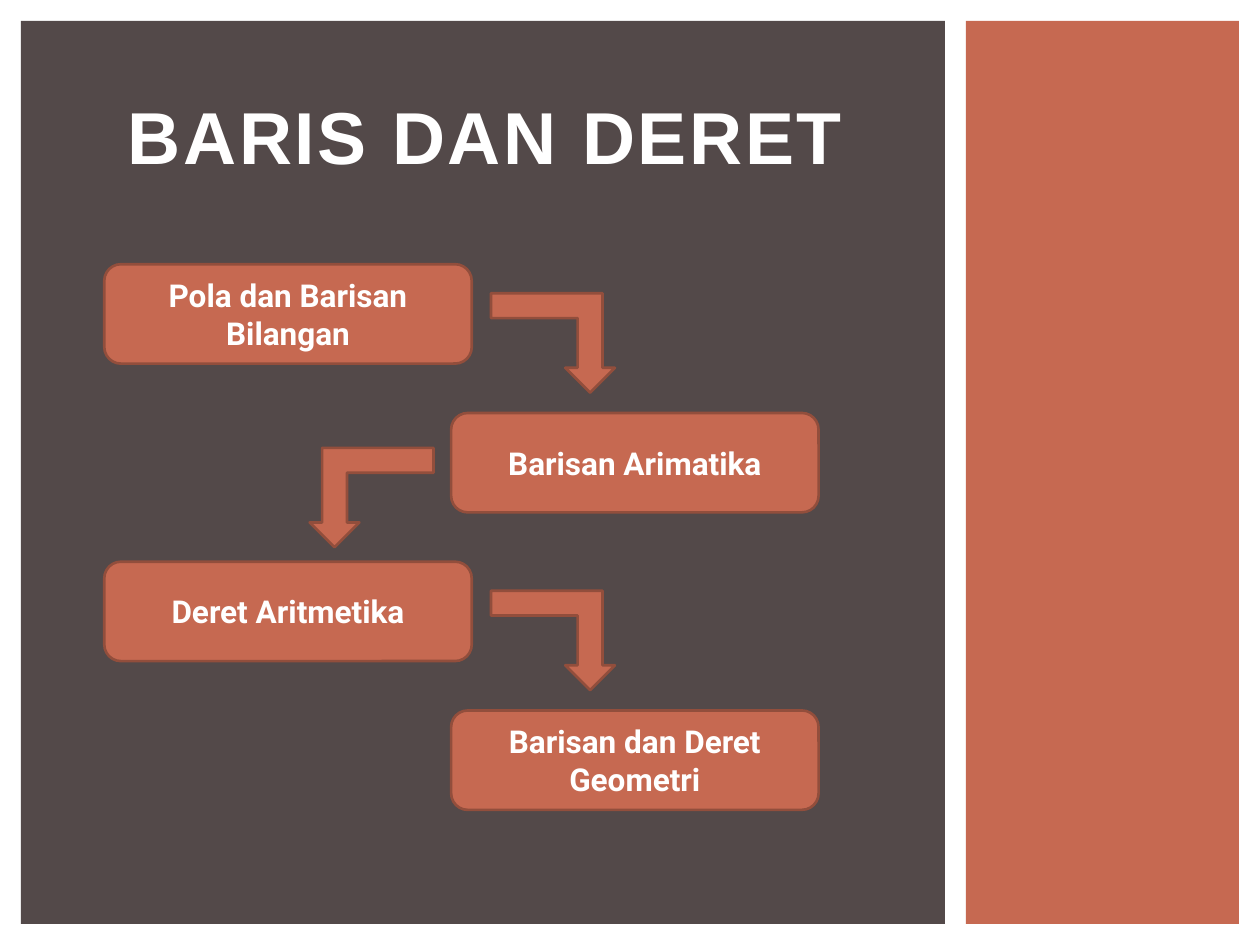
from dataclasses import dataclass

from pptx import Presentation
from pptx.dml.color import RGBColor
from pptx.enum import shapes, text
from pptx.util import Pt


@dataclass(frozen=True)
class Theme:
    dark: RGBColor = RGBColor(0x53, 0x49, 0x49)
    accent: RGBColor = RGBColor(0xC6, 0x69, 0x51)
    outline: RGBColor = RGBColor(0x92, 0x4E, 0x3C)
    white: RGBColor = RGBColor(0xFF, 0xFF, 0xFF)
    title_font: str = "Arial"
    step_font: str = "Roboto"
    title_size: float = 42
    step_size: float = 18
    line_width: float = 1.5


THEME = Theme()
SHAPE = shapes.MSO_SHAPE
STEPS = [
    "Pola dan Barisan Bilangan",
    "Barisan Arimatika",
    "Deret Aritmetika",
    "Barisan dan Deret Geometri",
]


def add_block(slide, kind, box, fill, outline=None):
    sp = slide.shapes.add_shape(kind, *map(Pt, box))
    sp.shadow.inherit = False
    sp.fill.solid()
    sp.fill.fore_color.rgb = fill
    if outline is None:
        sp.line.fill.background()
    else:
        sp.line.color.rgb = outline
        sp.line.width = Pt(THEME.line_width)
    return sp


def write_centred(sp, content, font, size):
    tf = sp.text_frame
    tf.word_wrap = True
    tf.vertical_anchor = text.MSO_ANCHOR.MIDDLE
    p = tf.paragraphs[0]
    p.alignment = text.PP_ALIGN.CENTER
    r = p.add_run()
    r.text = content
    p.font.name = font
    p.font.size = Pt(size)
    p.font.bold = True
    p.font.color.rgb = THEME.white
    return r


def add_panels(slide, box):
    x, y, w, h = box
    side_w, gap = 156, 12
    main_w = w - side_w - gap
    add_block(slide, SHAPE.RECTANGLE, (x + main_w + gap, y, side_w, h), THEME.accent)
    add_block(slide, SHAPE.RECTANGLE, (x, y, main_w, h), THEME.dark)


def add_title(slide, box, content):
    sp = slide.shapes.add_textbox(*map(Pt, box))
    r = write_centred(sp, content, THEME.title_font, THEME.title_size)
    r._r.get_or_add_rPr().set("spc", "150")


def add_arrow(slide, box, to_left):
    sp = add_block(slide, SHAPE.BENT_UP_ARROW, box, THEME.accent, THEME.outline)
    xfrm = sp._element.spPr.xfrm
    xfrm.set("flipV", "1")
    if to_left:
        xfrm.set("flipH", "1")


def add_staircase(slide, box, steps):
    x, y, w, h = box
    step_w, step_h = 210, 56.8
    arrow_w, arrow_h = 70.8, 56.8
    pitch = (h - step_h) / (len(steps) - 1)
    for i, label in enumerate(steps):
        on_right = i % 2 == 1
        left = x + w - step_w if on_right else x
        top = y + i * pitch
        sp = add_block(slide, SHAPE.ROUNDED_RECTANGLE, (left, top, step_w, step_h),
                       THEME.accent, THEME.outline)
        write_centred(sp, label, THEME.step_font, THEME.step_size)
        if i < len(steps) - 1:
            arrow_x = left - 10 - arrow_w if on_right else left + step_w + 11
            arrow_y = top + (20 if on_right else 16.6)
            add_arrow(slide, (arrow_x, arrow_y, arrow_w, arrow_h), on_right)


def main():
    prs = Presentation()
    prs.slide_width, prs.slide_height = Pt(720), Pt(540)
    slide = prs.slides.add_slide(prs.slide_layouts[6])
    add_panels(slide, (12, 12, 696, 516))
    add_title(slide, (25.2, 26, 504, 102), "BARIS DAN DERET")
    add_staircase(slide, (59.6, 151, 408.2, 311.8), STEPS)
    prs.save("out.pptx")


if __name__ == "__main__":
    main()
